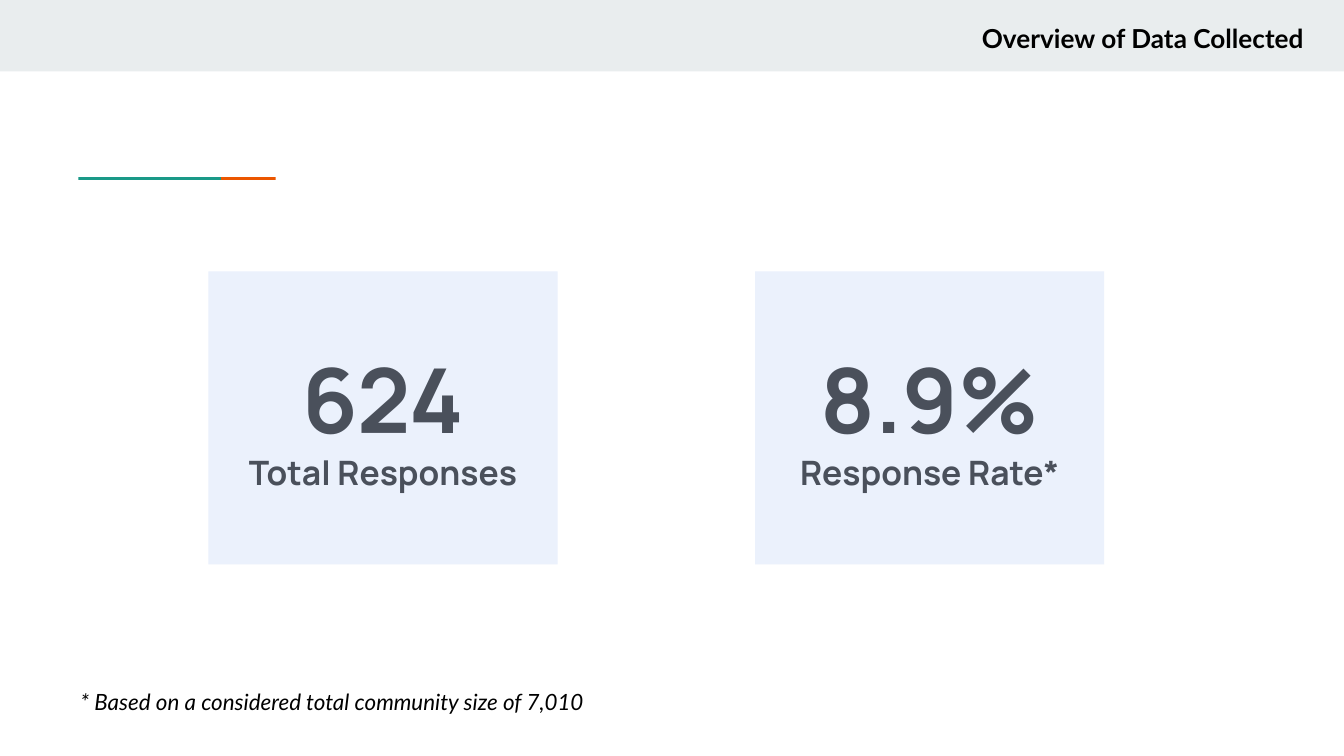
from dataclasses import dataclass

from lxml.etree import SubElement
from pptx import Presentation
from pptx.dml.color import RGBColor
from pptx.enum.shapes import MSO_SHAPE as Shape
from pptx.enum.text import MSO_ANCHOR as Anchor, MSO_AUTO_SIZE as AutoSize, PP_ALIGN as Align
from pptx.oxml.ns import qn
from pptx.util import Cm, Pt

COLORS = {
    "band": "E9EDEE",
    "green": "1A9988",
    "orange": "EB5600",
    "card": "C9DAF8",
    "text": "000000",
}
CARD_TOP, CARD_W, CARD_H = 5.13, 6.6, 5.54
CARD_INSET = 0.44
CARD_OPACITY = 37
MARGIN = 0.25


@dataclass
class Bar:
    left: float
    top: float
    width: float
    height: float
    color: str


@dataclass
class Stat:
    left: float
    value: str
    label: str


BAND = Bar(0, 0, 25.4, 1.35, "band")
ACCENTS = [
    Bar(1.48, 3.35, 2.7, 0.05, "green"),
    Bar(4.18, 3.35, 1.03, 0.05, "orange"),
]
STATS = [
    Stat(3.94, "624", "Total Responses"),
    Stat(14.27, "8.9%", "Response Rate*"),
]


def add_bar(slide, bar: Bar, opacity: int = 100):
    s = slide.shapes.add_shape(
        Shape.RECTANGLE, Cm(bar.left), Cm(bar.top), Cm(bar.width), Cm(bar.height))
    s.shadow.inherit = False
    s.fill.solid()
    s.fill.fore_color.rgb = RGBColor.from_string(COLORS[bar.color])
    s.line.fill.background()
    if opacity < 100:
        color = s._element.spPr.find(qn("a:solidFill"))[0]
        SubElement(color, qn("a:alpha"), val=str(opacity * 1000))
    return s


def format_frame(tf, anchor=Anchor.TOP) -> None:
    tf.word_wrap = True
    tf.auto_size = AutoSize.NONE
    tf.vertical_anchor = anchor
    tf.margin_left = tf.margin_right = tf.margin_top = tf.margin_bottom = Cm(MARGIN)


def format_paragraph(p, size: int, font: str, align=Align.LEFT,
                     bold: bool = False, italic: bool = False) -> None:
    p.alignment = align
    for r in p.runs:
        r.font.size = Pt(size)
        r.font.name = font
        r.font.bold = bold
        r.font.italic = italic
        r.font.color.rgb = RGBColor.from_string(COLORS["text"])


def add_stat(slide, stat: Stat) -> None:
    box = slide.shapes.add_textbox(
        Cm(stat.left + CARD_INSET), Cm(CARD_TOP),
        Cm(CARD_W - 2 * CARD_INSET), Cm(CARD_H))
    tf = box.text_frame
    format_frame(tf, Anchor.MIDDLE)
    tf.text = f"{stat.value}\n{stat.label}"
    for p, size in zip(tf.paragraphs, (48, 18)):
        format_paragraph(p, size, "Manrope", Align.CENTER, bold=True)
    # The translucent card lies over its text and softens it
    add_bar(slide, Bar(stat.left, CARD_TOP, CARD_W, CARD_H, "card"), CARD_OPACITY)


def main() -> None:
    prs = Presentation()
    prs.slide_width, prs.slide_height = Cm(25.4), Cm(14.29)
    slide = prs.slides.add_slide(prs.slide_layouts[5])

    # Header band, placed behind the title
    title = slide.shapes.title
    band = add_bar(slide, BAND)
    title._element.addprevious(band._element)

    # Title
    title.left, title.top, title.width, title.height = Cm(16.18), Cm(0.18), Cm(8.71), Cm(0.99)
    title.text_frame.text = "Overview of Data Collected"
    format_frame(title.text_frame)
    format_paragraph(title.text_frame.paragraphs[0], 14, "Lato", Align.RIGHT, bold=True)

    # Two-colour accent line
    for accent in ACCENTS:
        add_bar(slide, accent)

    # Key figures
    for stat in STATS:
        add_stat(slide, stat)

    # Footnote
    note = slide.shapes.add_textbox(Cm(1.27), Cm(12.75), Cm(17.3), Cm(1.12))
    format_frame(note.text_frame)
    note.text_frame.text = "* Based on a considered total community size of 7,010"
    format_paragraph(note.text_frame.paragraphs[0], 12, "Lato", italic=True)

    prs.save("out.pptx")


if __name__ == "__main__":
    main()
